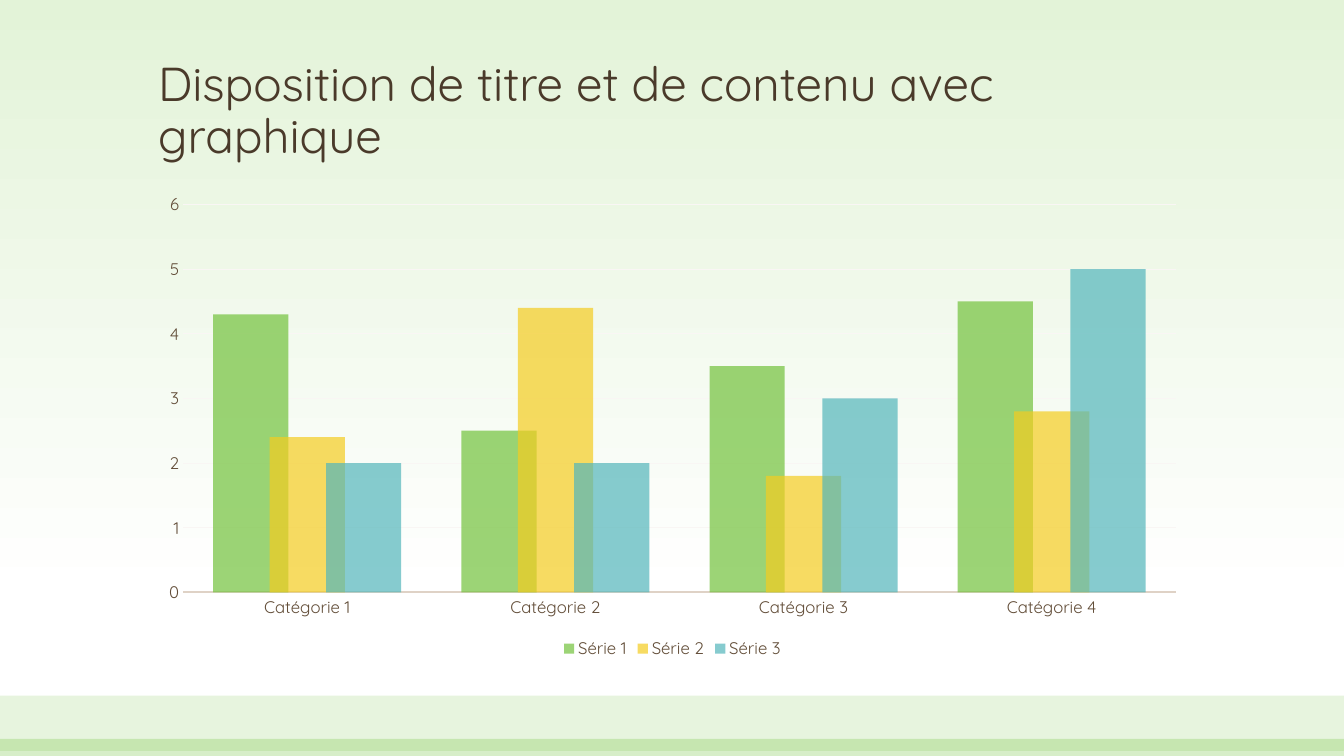
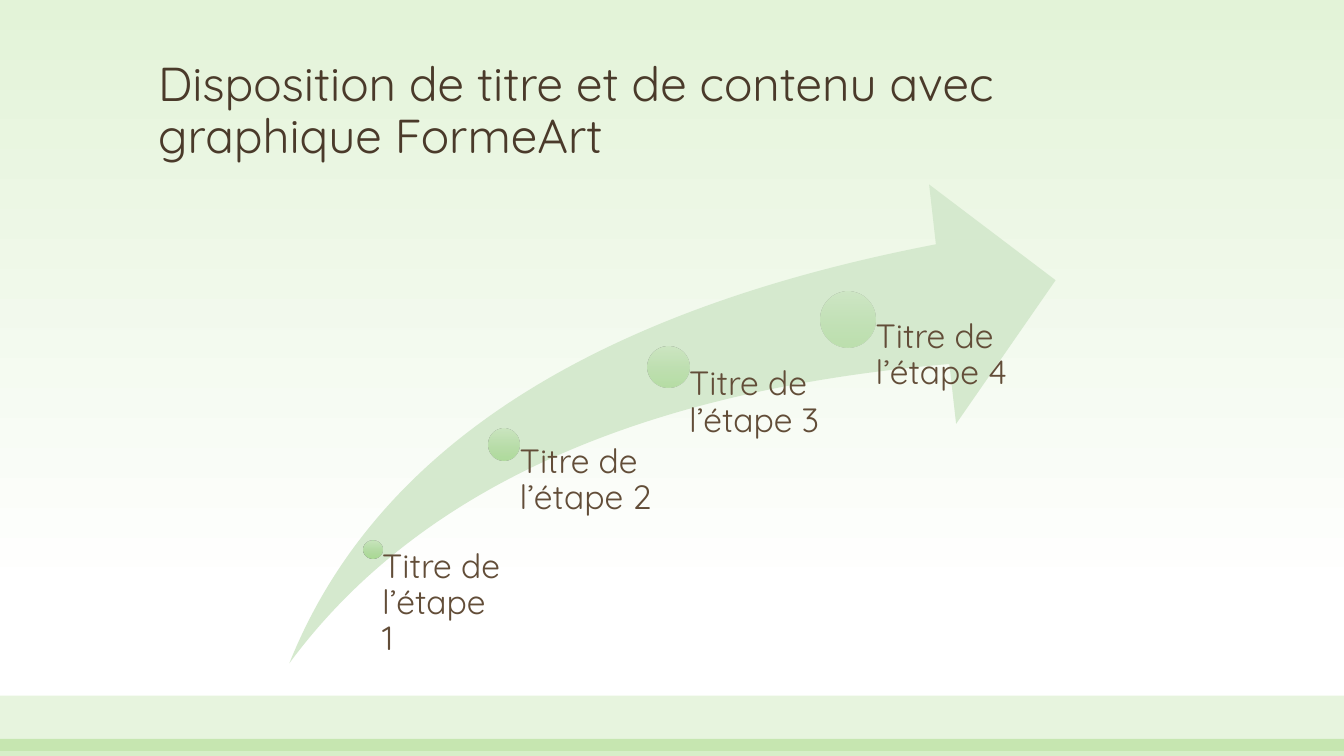
"""Build two slides: a column chart and a four-step rising arrow."""
from lxml import etree
from pptx import Presentation
from pptx.chart.data import CategoryChartData
from pptx.dml.color import RGBColor
from pptx.enum.chart import XL_CHART_TYPE, XL_LEGEND_POSITION, XL_TICK_MARK
from pptx.enum.shapes import MSO_SHAPE
from pptx.enum.text import MSO_ANCHOR
from pptx.oxml.ns import qn
from pptx.util import Inches, Pt

COLUMNS = XL_CHART_TYPE.COLUMN_CLUSTERED
LEGEND_BOTTOM = XL_LEGEND_POSITION.BOTTOM
NO_TICK = XL_TICK_MARK.NONE
RECTANGLE, ELLIPSE, SWOOSH = MSO_SHAPE.RECTANGLE, MSO_SHAPE.OVAL, MSO_SHAPE.SWOOSH_ARROW
TOP, BOTTOM = MSO_ANCHOR.TOP, MSO_ANCHOR.BOTTOM

FONT = "Quicksand"
COLOURS = {
    "title": "4A3A2A", "text": "624D38", "axis": "DFD2C6", "grid": "F9F6F4",
    "green": "72C23C", "yellow": "F4CC20", "teal": "53B6BB", "arrow": "D5E9CE",
    "sky": "E3F3D8", "white": "FFFFFF",
    "dot_top": "C8E5BC", "dot_middle": "B3DBA2", "dot_base": "A4D78D",
}
WIDTH, HEIGHT = 13.33, 7.5
LEFT, CONTENT_TOP, CONTENT_WIDTH, CONTENT_HEIGHT = 1.47, 1.83, 10.4, 4.75
CONTENT_BOTTOM = CONTENT_TOP + CONTENT_HEIGHT
TITLE_BOX = (LEFT, 0.48, CONTENT_WIDTH, 1.19)
CONTENT_BOX = (LEFT, CONTENT_TOP, CONTENT_WIDTH, CONTENT_HEIGHT)
ARROW_WIDTH = CONTENT_HEIGHT * 1.6
ARROW_BOX = (LEFT + (CONTENT_WIDTH - ARROW_WIDTH) / 2, CONTENT_TOP, ARROW_WIDTH, CONTENT_HEIGHT)

BACKGROUND = [(0, "sky"), (79, "white")]
DOT_SHADES = [(0, "dot_top"), (50, "dot_middle"), (100, "dot_base")]
BANDS = [(6.9, 0.55, 17), (7.33, 0.17, 28)]

CHART_TITLE = "Disposition de titre et de contenu avec graphique"
STEPS_TITLE = "Disposition de titre et de contenu avec graphique FormeArt"
CATEGORIES = ["Catégorie 1", "Catégorie 2", "Catégorie 3", "Catégorie 4"]
SERIES = [
    ("Série 1", (4.3, 2.5, 3.5, 4.5), "green"),
    ("Série 2", (2.4, 4.4, 1.8, 2.8), "yellow"),
    ("Série 3", (2, 2, 3, 5), "teal"),
]
STEPS = [
    ("Titre de l’étape 1", 3.7, 5.45, 0.18, 1.3),
    ("Titre de l’étape 2", 5, 4.41, 0.31, 1.6),
    ("Titre de l’étape 3", 6.63, 3.64, 0.41, 1.6),
    ("Titre de l’étape 4", 8.41, 3.17, 0.55, 1.6),
]


def colour(name):
    return RGBColor.from_string(COLOURS[name])


def add_alpha(colour_element, percent):
    etree.SubElement(colour_element, qn("a:alpha"), val=str(round(percent * 1000)))


def fill_solid(fill, name, element=None, opacity=100):
    fill.solid()
    fill.fore_color.rgb = colour(name)
    if opacity < 100:
        add_alpha(element.find(f"{qn('a:solidFill')}/{qn('a:srgbClr')}"), opacity)


def fill_gradient(fill, element, stops, opacity=100):
    fill.gradient()
    fill.gradient_angle = 270
    stop_list = element.find(f".//{qn('a:gsLst')}")
    for old_stop in list(stop_list):
        stop_list.remove(old_stop)
    for position, name in stops:
        stop = etree.SubElement(stop_list, qn("a:gs"), pos=str(position * 1000))
        stop_colour = etree.SubElement(stop, qn("a:srgbClr"), val=COLOURS[name])
        if opacity < 100:
            add_alpha(stop_colour, opacity)


def style_font(font, size, name="text"):
    font.name, font.size, font.color.rgb = FONT, Pt(size), colour(name)


def add_plain_shape(page, kind, box):
    shape = page.shapes.add_shape(kind, *map(Inches, box))
    shape.shadow.inherit = False
    shape.line.fill.background()
    return shape


def add_text(page, text, box, size, name="text", anchor=TOP, insets=(0.1, 0.05, 0.1, 0.05)):
    frame = page.shapes.add_textbox(*map(Inches, box)).text_frame
    frame.word_wrap = True
    frame.vertical_anchor = anchor
    (frame.margin_left, frame.margin_top,
     frame.margin_right, frame.margin_bottom) = map(Inches, insets)
    para = frame.paragraphs[0]
    para.line_spacing = 0.9
    span = para.add_run()
    span.text = text
    style_font(span.font, size, name)


def add_page(deck, title):
    page = deck.slides.add_slide(deck.slide_layouts[6])
    for top, height, opacity in BANDS:
        band = add_plain_shape(page, RECTANGLE, (0, top, WIDTH, height))
        fill_solid(band.fill, "green", band.element.spPr, opacity)
    add_text(page, title, TITLE_BOX, 34, "title", BOTTOM)
    return page


def add_column_chart(page):
    data = CategoryChartData()
    data.categories = CATEGORIES
    for name, values, _ in SERIES:
        data.add_series(name, values)
    chart = page.shapes.add_chart(COLUMNS, *map(Inches, CONTENT_BOX), data).chart
    style_font(chart.font, 10)
    chart.has_title = False
    chart.has_legend = True
    chart.legend.position = LEGEND_BOTTOM
    chart.legend.include_in_layout = False
    style_font(chart.legend.font, 12)

    plot = chart.plots[0]
    plot.vary_by_categories = False
    plot.gap_width, plot.overlap = 80, 25
    for series, (_, _, name) in zip(plot.series, SERIES):
        series.invert_if_negative = False
        fill = series.format.fill
        fill_solid(fill, name, series.format.element.spPr if hasattr(series.format, "element")
                   else series.get_or_add_ln().getparent() if hasattr(series, "get_or_add_ln")
                   else plot_series_properties(chart, series.index), 70)

    category_axis, value_axis = chart.category_axis, chart.value_axis
    for axis in (category_axis, value_axis):
        axis.major_tick_mark = axis.minor_tick_mark = NO_TICK
        style_font(axis.tick_labels.font, 12)
    value_axis.minimum_scale, value_axis.maximum_scale, value_axis.major_unit = 0, 6, 1
    value_axis.format.line.fill.background()
    for line, name, width in (
        (category_axis.format.line, "axis", 1.25),
        (value_axis.major_gridlines.format.line, "grid", 0.75),
    ):
        line.color.rgb, line.width = colour(name), Pt(width)


def plot_series_properties(chart, index):
    return chart.element.findall(f".//{qn('c:ser')}")[index].find(qn("c:spPr"))


def add_rising_steps(page):
    arrow = add_plain_shape(page, SWOOSH, ARROW_BOX)
    arrow.adjustments[0] = arrow.adjustments[1] = 0.25
    fill_solid(arrow.fill, "arrow")
    for index, (text, x, y, size, width) in enumerate(STEPS):
        radius = size / 2
        dot = add_plain_shape(page, ELLIPSE, (x - radius, y - radius, size, size))
        opacity = 90 - 40 * index / (len(STEPS) - 1)
        fill_gradient(dot.fill, dot.element.spPr, DOT_SHADES, opacity)
        add_text(page, text, (x, y, width, CONTENT_BOTTOM - y), 24, insets=(radius, 0, 0, 0))


def main():
    deck = Presentation()
    deck.slide_width, deck.slide_height = Inches(WIDTH), Inches(HEIGHT)
    master = deck.slide_master
    fill_gradient(master.background.fill, master.element, BACKGROUND)
    add_column_chart(add_page(deck, CHART_TITLE))
    add_rising_steps(add_page(deck, STEPS_TITLE))
    deck.save("out.pptx")


if __name__ == "__main__":
    main()
